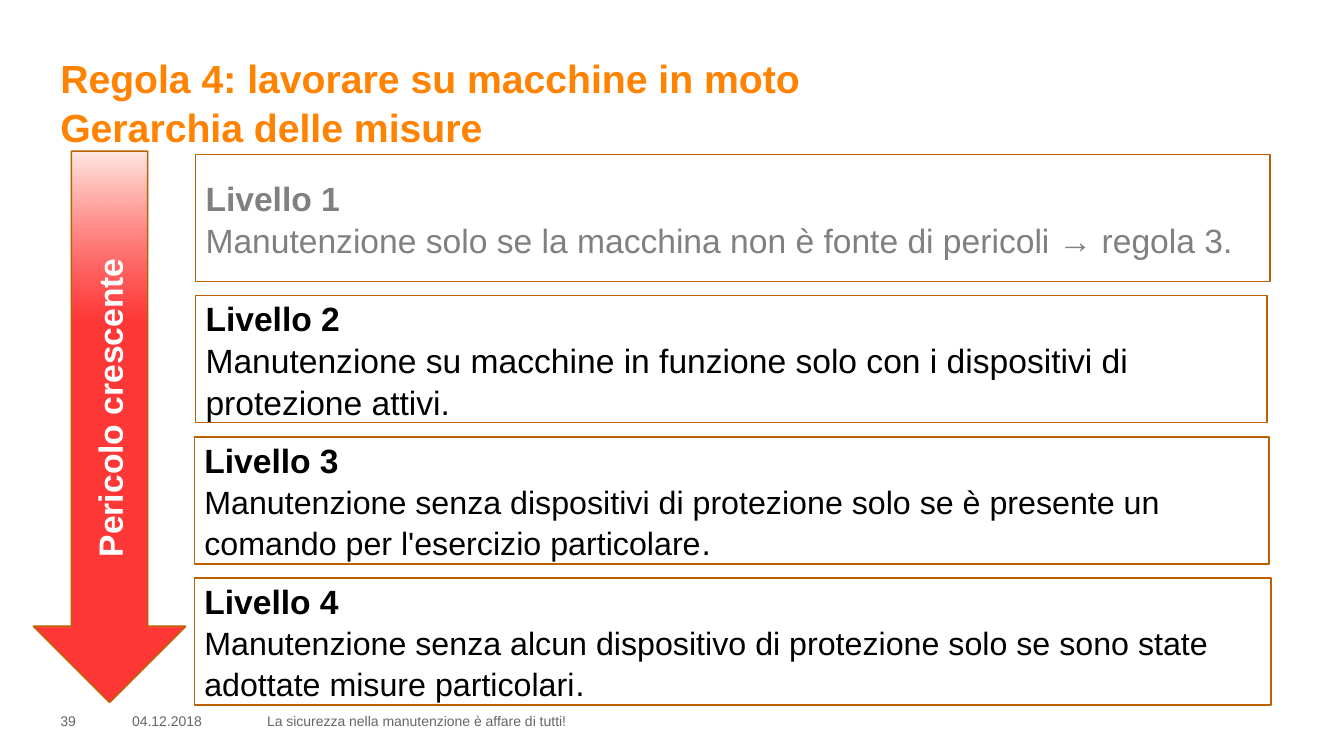
from pptx import Presentation
from pptx.dml.color import RGBColor
from pptx.enum.shapes import MSO_SHAPE
from pptx.enum.text import MSO_ANCHOR, PP_ALIGN
from pptx.oxml.ns import qn
from pptx.util import Cm, Pt
from lxml import etree

RECTANGLE = MSO_SHAPE.RECTANGLE
DOWN_ARROW = MSO_SHAPE.DOWN_ARROW
TOP, MIDDLE = MSO_ANCHOR.TOP, MSO_ANCHOR.MIDDLE
LEFT, CENTER = PP_ALIGN.LEFT, PP_ALIGN.CENTER

ORANGE = RGBColor(0xFF, 0x82, 0x00)
BROWN = RGBColor(0xBD, 0x60, 0x00)
BLACK = RGBColor(0x00, 0x00, 0x00)
WHITE = RGBColor(0xFF, 0xFF, 0xFF)
GRAY = RGBColor(0x80, 0x80, 0x80)
FOOTER_GRAY = RGBColor(0x66, 0x66, 0x66)
RED = RGBColor(0xFF, 0x00, 0x00)
PALE_RED = RGBColor(0xFF, 0xE9, 0xE3)


def write_text(shape, lines, color, anchor=MIDDLE, align=LEFT, inset=None, spacing=None):
    """Fill one paragraph with lines; each line is a list of (text, size, bold)."""
    frame = shape.text_frame
    frame.word_wrap = True
    frame.vertical_anchor = anchor
    if inset is not None:
        frame.margin_left = frame.margin_right = inset
        frame.margin_top = frame.margin_bottom = inset
    paragraph = frame.paragraphs[0]
    paragraph.alignment = align
    if spacing:
        paragraph.line_spacing = spacing
    for index, line in enumerate(lines):
        if index:
            paragraph.add_line_break()
        for text, size, bold in line:
            run = paragraph.add_run()
            run.text = text
            run.font.name = "Arial"
            run.font.size = Pt(size)
            run.font.bold = bold
            run.font.color.rgb = color


def add_outlined_shape(kind, left, top, width, height):
    shape = slide.shapes.add_shape(kind, Cm(left), Cm(top), Cm(width), Cm(height))
    shape.shadow.inherit = False
    shape.fill.background()
    shape.line.color.rgb = BROWN
    shape.line.width = Pt(1)
    return shape


presentation = Presentation()
presentation.slide_width = Cm(33.87)
presentation.slide_height = Cm(19.05)
slide = presentation.slides.add_slide(presentation.slide_layouts[6])

# Title
title = slide.shapes.add_textbox(Cm(1.52), Cm(1.32), Cm(30.81), Cm(2.39))
title_lines = ["Regola 4: lavorare su macchine in moto", "Gerarchia delle misure"]
write_text(title, [[(line, 28, True)] for line in title_lines], ORANGE,
           anchor=TOP, inset=0, spacing=1.04)

# Footer
footers = [
    (1.52, 1.4, "39"),
    (3.33, 3, "04.12.2018"),
    (6.73, 21.79, "La sicurezza nella manutenzione è affare di tutti!"),
]
for left, width, text in footers:
    footer = slide.shapes.add_textbox(Cm(left), Cm(17.91), Cm(width), Cm(0.51))
    write_text(footer, [[(text, 10, False)]], FOOTER_GRAY, inset=0)

# Levels: left, width, colour, size, text
levels = [
    (4.93, 27.08, GRAY, 24,
     "Manutenzione solo se la macchina non è fonte di pericoli → regola 3"),
    (4.93, 27, BLACK, 24,
     "Manutenzione su macchine in funzione solo con i dispositivi di protezione attivi"),
    (4.9, 27.08, BLACK, 23,
     "Manutenzione senza dispositivi di protezione solo se è presente un comando "
     "per l'esercizio particolare"),
    (4.9, 27.13, BLACK, 23,
     "Manutenzione senza alcun dispositivo di protezione solo se sono state "
     "adottate misure particolari"),
]
for index, (left, width, color, size, text) in enumerate(levels):
    box = add_outlined_shape(RECTANGLE, left, 3.89 + index * 3.56, width, 3.2)
    heading = [(f"Livello {index + 1}", 24, True)]
    write_text(box, [heading, [(text, size, False), (".", 24, False)]], color, spacing=1.04)

# Danger arrow, pale at the top
arrow = add_outlined_shape(DOWN_ARROW, 0.84, 3.81, 3.84, 13.89)
arrow.fill.gradient()
arrow.fill.gradient_angle = 90
red_stop, pale_stop = arrow.fill.gradient_stops
red_stop.position, red_stop.color.rgb = 0.69, RED
pale_stop.position, pale_stop.color.rgb = 1, PALE_RED
red_element = arrow._element.spPr.find(".//" + qn("a:gs")).find(qn("a:srgbClr"))
etree.SubElement(red_element, qn("a:alpha")).set("val", "78000")
write_text(arrow, [[("Pericolo crescente", 24, True)]], WHITE, align=CENTER)
arrow.text_frame._txBody.bodyPr.set("vert", "vert270")

presentation.save("out.pptx")
